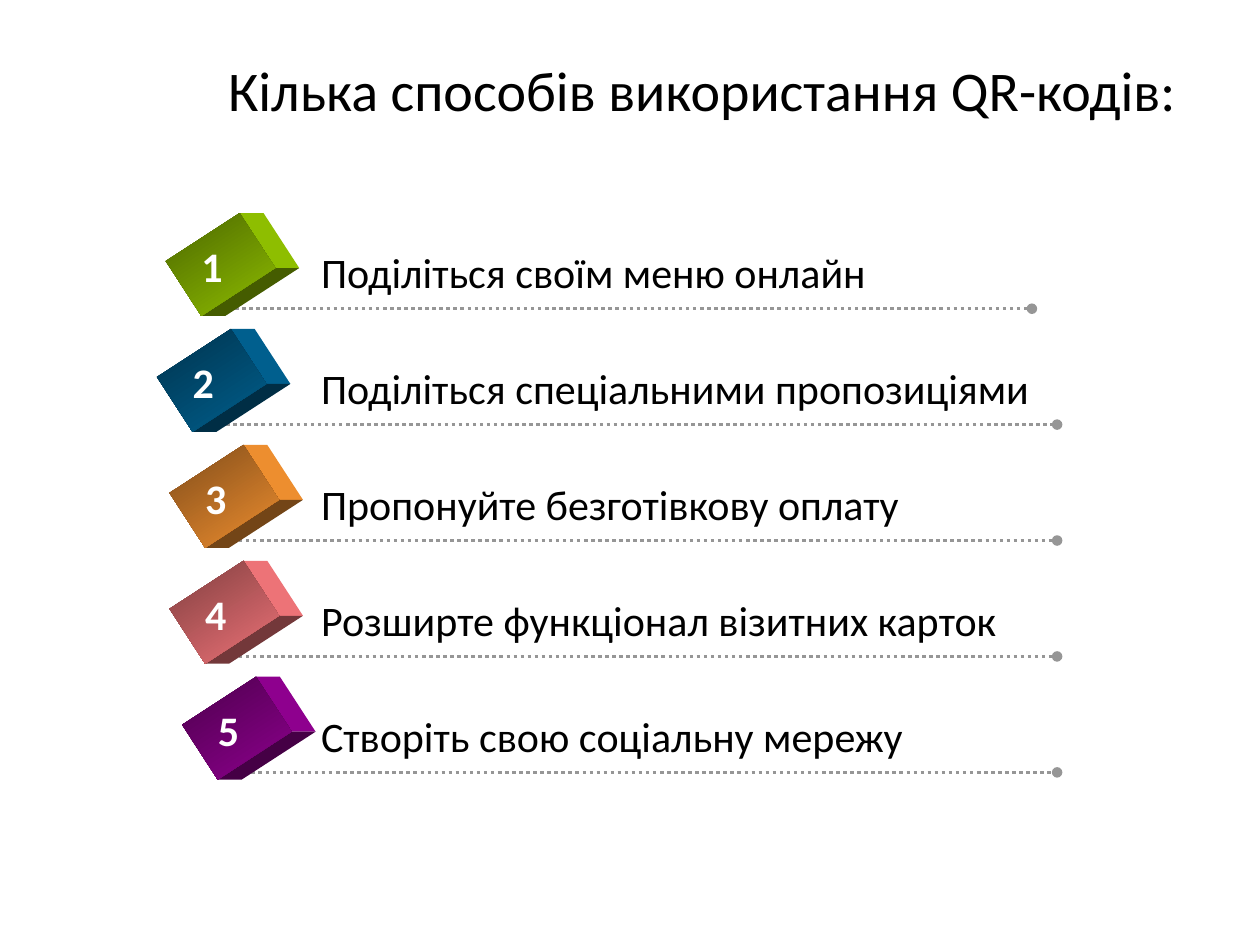
from dataclasses import dataclass
from math import cos, radians, sin

from lxml.etree import SubElement
from pptx import Presentation
from pptx.dml.color import RGBColor
from pptx.enum.dml import MSO_LINE
from pptx.enum.shapes import MSO_CONNECTOR, MSO_SHAPE
from pptx.enum.text import MSO_ANCHOR, PP_ALIGN
from pptx.oxml.ns import qn
from pptx.util import Inches, Pt

COLORS = {
    "text": "000000", "number": "FFFFFF", "rule": "969696",
    "green": "99CC00", "blue": "006699", "orange": "FF9933",
    "pink": "FF7C80", "purple": "990099",
}
FONT = "Calibri"

# Grid: one row per idea, measured from its dotted rule
FIRST_RULE, ROW_PITCH = 2.45, 0.92
CAPTION_COLUMN = 2.45
BLOCK_WIDTH, BLOCK_HEIGHT, BLOCK_TILT, BLOCK_DEPTH = 0.52, 0.7, 57, 0.19
DARK, FACE_START, LIT = 0.45, 0.5, 0.93


@dataclass(frozen=True)
class Idea:
    caption: str
    color: str
    block_left: float
    rule_end: float = 8.39
    caption_width: float = 5.94


IDEAS = [
    Idea("Поділіться своїм меню онлайн", "green", 1.49, 8.19, 6.85),
    Idea("Поділіться спеціальними пропозиціями", "blue", 1.42),
    Idea("Пропонуйте безготівкову оплату", "orange", 1.52, caption_width=6.16),
    Idea("Розширте функціонал візитних карток", "pink", 1.52, caption_width=6.16),
    Idea("Створіть свою соціальну мережу", "purple", 1.62),
]


def shade(color: str, share: float = 1) -> RGBColor:
    """Return the named colour darkened to a share of its brightness."""
    return RGBColor(*(round(channel * share)
                      for channel in RGBColor.from_string(COLORS[color])))


def write(frame, text: str, color: str, size: int, bold: bool = False) -> None:
    paragraph = frame.paragraphs[0]
    paragraph.text = text
    paragraph.alignment = PP_ALIGN.LEFT
    font = paragraph.runs[0].font
    for name, value in {"name": FONT, "size": Pt(size), "bold": bold}.items():
        setattr(font, name, value)
    font.color.rgb = shade(color)


def add_label(slide, left: float, top: float, width: float, text: str,
              color: str, bold: bool = False, wrap: bool = True) -> None:
    label = slide.shapes.add_textbox(
        Inches(left), Inches(top), Inches(width), Inches(0.5))
    label.text_frame.word_wrap = wrap
    write(label.text_frame, text, color, 24, bold)


def add_rule(slide, start: float, end: float, y: float) -> None:
    """Draw a dotted rule that ends in a dot."""
    rule = slide.shapes.add_connector(
        MSO_CONNECTOR.STRAIGHT, Inches(start), Inches(y), Inches(end), Inches(y))
    rule.line.color.rgb = shade("rule")
    rule.line.width = Pt(2)
    rule.line.dash_style = MSO_LINE.ROUND_DOT
    SubElement(rule.line._get_or_add_ln(), qn("a:tailEnd"), type="oval")
    SubElement(rule._element.spPr, qn("a:effectLst"))


def add_side(slide, near: tuple, far: tuple, fill: RGBColor) -> None:
    """Draw the side of a block that recedes from the edge near-far."""
    corners = [near, (near[0] + BLOCK_DEPTH, near[1]),
               (far[0] + BLOCK_DEPTH, far[1]), far]
    points = [(Inches(x), Inches(y)) for x, y in corners]
    builder = slide.shapes.build_freeform(*points[0])
    builder.add_line_segments(points[1:])
    side = builder.convert_to_shape()
    side.shadow.inherit = False
    side.fill.solid()
    side.fill.fore_color.rgb = fill
    side.line.fill.background()


def add_block(slide, left: float, top: float, color: str) -> None:
    """Draw a tilted block: two receding sides and a shaded face."""
    tilt = radians(BLOCK_TILT)
    center_x, center_y = left + BLOCK_WIDTH / 2, top + BLOCK_HEIGHT / 2

    def corner(across: int, down: int) -> tuple:
        x, y = across * BLOCK_WIDTH / 2, down * BLOCK_HEIGHT / 2
        return (center_x + x * cos(tilt) - y * sin(tilt),
                center_y + x * sin(tilt) + y * cos(tilt))

    upper, right, lower = corner(-1, -1), corner(1, -1), corner(1, 1)
    add_side(slide, upper, right, shade(color, LIT))
    add_side(slide, right, lower, shade(color, DARK))

    face = slide.shapes.add_shape(
        MSO_SHAPE.RECTANGLE, Inches(left), Inches(top),
        Inches(BLOCK_WIDTH), Inches(BLOCK_HEIGHT))
    face.rotation = BLOCK_TILT
    face.shadow.inherit = False
    face.line.fill.background()
    face.fill.gradient()
    face.fill.gradient_angle = 0
    for stop, share in zip(face.fill.gradient_stops, (FACE_START, LIT)):
        stop.color.rgb = shade(color, share)


def add_idea(slide, number: int, idea: Idea) -> None:
    rule_y = FIRST_RULE + (number - 1) * ROW_PITCH
    add_rule(slide, idea.block_left + 0.32, idea.rule_end, rule_y)
    add_block(slide, idea.block_left, rule_y - BLOCK_HEIGHT, idea.color)
    add_label(slide, CAPTION_COLUMN, rule_y - 0.54, idea.caption_width,
              idea.caption, "text")
    add_label(slide, idea.block_left + 0.01, rule_y - 0.59, 0.48,
              str(number), "number", bold=True, wrap=False)


def add_title(slide, text: str) -> None:
    title = slide.shapes.title
    place = {"left": 1.71, "top": 0.32, "width": 7.86, "height": 0.84}
    for name, value in place.items():
        setattr(title, name, Inches(value))
    title.text_frame.vertical_anchor = MSO_ANCHOR.MIDDLE
    write(title.text_frame, text, "text", 32)
    title.text_frame.paragraphs[0].line_spacing = 0.9


def main() -> None:
    deck = Presentation()
    deck.slide_width, deck.slide_height = Inches(10), Inches(7.5)
    slide = deck.slides.add_slide(deck.slide_layouts.get_by_name("Title Only"))
    add_title(slide, "Кілька способів використання QR-кодів:")
    for number, idea in enumerate(IDEAS, start=1):
        add_idea(slide, number, idea)
    deck.save("out.pptx")


if __name__ == "__main__":
    main()
